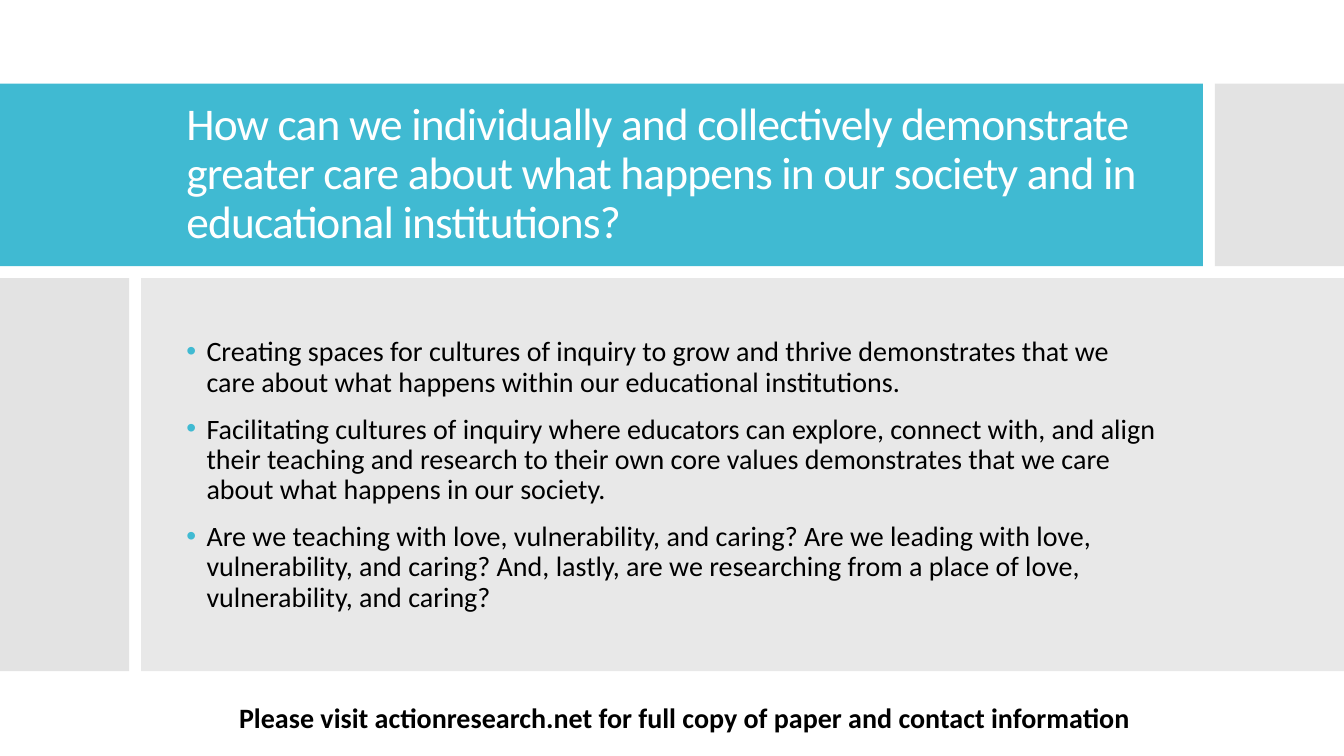
from lxml import etree
from pptx import Presentation
from pptx.dml.color import RGBColor
from pptx.enum import shapes, text
from pptx.oxml.ns import qn
from pptx.util import Inches, Pt

TEAL, PALE, PANEL = "40BAD2", "E3E3E3", "E8E8E8"


def color(code):
    return RGBColor.from_string(code)


def add_text(box, lines, size, code, bold=False):
    """Add a wrapped text box with one paragraph per line and return its frame."""
    frame = slide.shapes.add_textbox(*[Inches(n) for n in box]).text_frame
    frame.word_wrap = True
    frame.text = "\n".join(lines)
    for para in frame.paragraphs:
        for run in para.runs:
            run.font.name = "Calibri"
            run.font.size = Pt(size)
            run.font.bold = bold
            run.font.color.rgb = color(code)
    return frame


deck = Presentation()
deck.slide_width, deck.slide_height = Inches(13.33), Inches(7.5)
slide = deck.slides.add_slide(deck.slide_layouts[6])

# Colour bands
bands = [
    (0, 0.83, 11.93, 1.81, TEAL),
    (12.05, 0.83, 1.28, 1.81, PALE),
    (0, 2.76, 1.28, 3.9, PALE),
    (1.4, 2.76, 11.93, 3.9, PANEL),
]
for *box, fill in bands:
    band = slide.shapes.add_shape(
        shapes.MSO_SHAPE.RECTANGLE, *[Inches(n) for n in box])
    band.shadow.inherit = False
    band.fill.solid()
    band.fill.fore_color.rgb = color(fill)
    band.line.fill.background()

# Title
title = add_text((1.75, 1.19, 9.82, 1.09), [
    "How can we individually and collectively demonstrate greater care "
    "about what happens in our society and in educational institutions?",
], 32.4, "FFFFFF")
title.vertical_anchor = text.MSO_ANCHOR.MIDDLE
head = title.paragraphs[0]
head.line_spacing = 0.9
head.runs[0].font._element.set("spc", "-60")

# Bullet list
body = add_text((1.75, 2.77, 9.82, 3.89), [
    "Creating spaces for cultures of inquiry to grow and thrive demonstrates "
    "that we care about what happens within our educational institutions.",
    "Facilitating cultures of inquiry where educators can explore, connect "
    "with, and align their teaching and research to their own core values "
    "demonstrates that we care about what happens in our society.",
    "Are we teaching with love, vulnerability, and caring? Are we leading "
    "with love, vulnerability, and caring? And, lastly, are we researching "
    "from a place of love, vulnerability, and caring?",
], 20, "000000")
body.vertical_anchor = text.MSO_ANCHOR.MIDDLE
for i, para in enumerate(body.paragraphs):
    props = para._p.get_or_add_pPr()
    props.set("marL", str(Inches(0.2)))
    props.set("indent", str(-Inches(0.2)))
    tint = etree.SubElement(props, qn("a:buClr"))
    etree.SubElement(tint, qn("a:srgbClr"), val=TEAL)
    etree.SubElement(props, qn("a:buFont"), typeface="Arial")
    etree.SubElement(props, qn("a:buChar"), char="•")
    para.line_spacing = 0.9
    para.space_before = Pt(12 if i else 0)

# Closing note
note = add_text((0.59, 6.9, 12.4, 0.44), [
    "Please visit actionresearch.net for full copy of paper and contact information",
], 20, "000000", bold=True)
note.paragraphs[0].alignment = text.PP_ALIGN.CENTER

deck.save("out.pptx")
